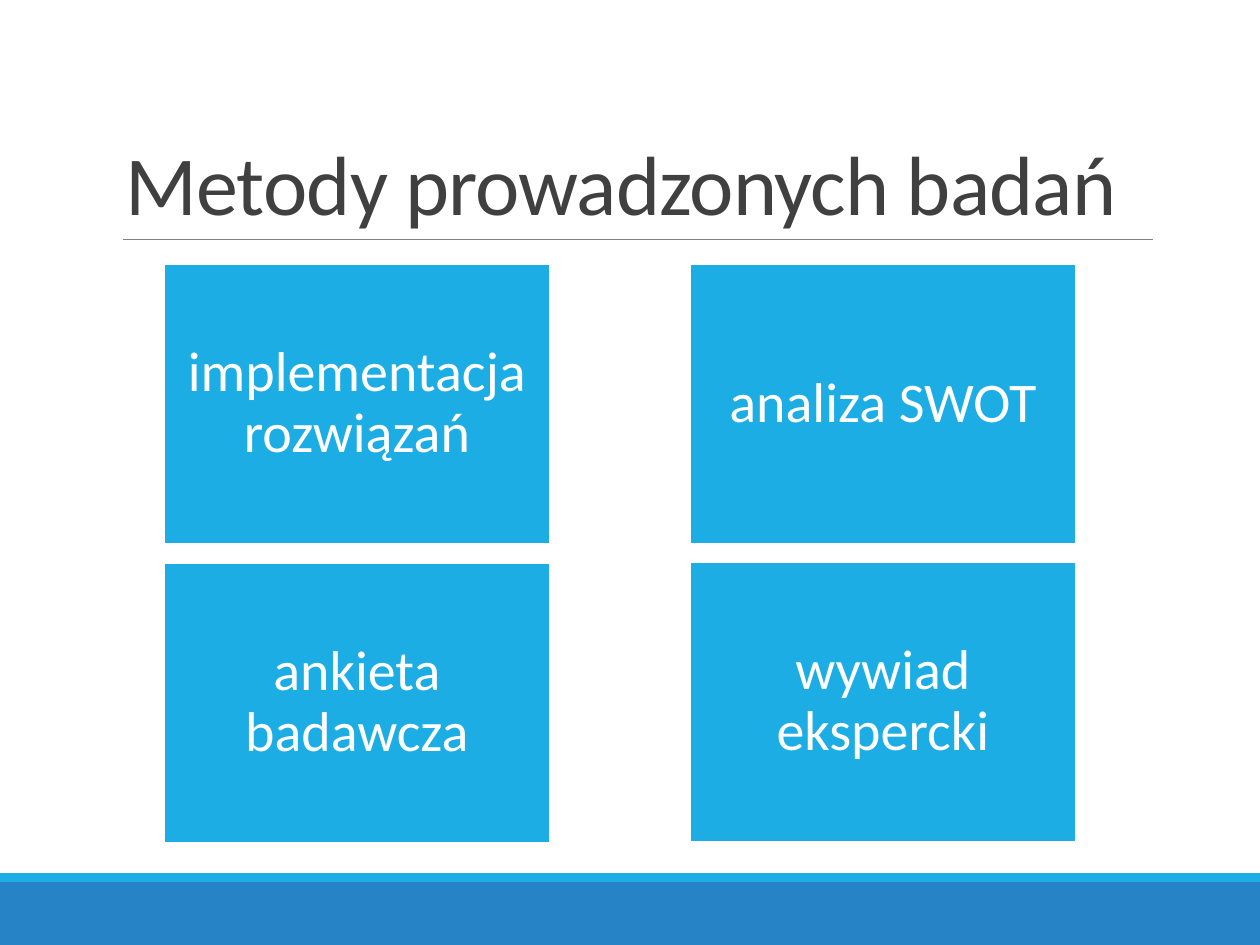
from lxml.etree import SubElement
from pptx import Presentation
from pptx.dml.color import RGBColor
from pptx.enum.shapes import MSO_CONNECTOR, MSO_SHAPE
from pptx.enum.text import MSO_ANCHOR, MSO_AUTO_SIZE, PP_ALIGN
from pptx.oxml.ns import qn
from pptx.util import Pt

COLORS = {"band": "2683C6", "accent": "1CADE4", "rule": "808080",
          "title": "404040", "white": "FFFFFF"}
PX = 914400 / 126


def px(*values):
    return [round(v * PX) for v in values]


def add_rect(box, color):
    sp = s.shapes.add_shape(MSO_SHAPE.RECTANGLE, *px(*box))
    sp.shadow.inherit = False
    sp.fill.solid()
    sp.fill.fore_color.rgb = RGBColor.from_string(COLORS[color])
    sp.line.fill.background()
    return sp


prs = Presentation()
prs.slide_width, prs.slide_height = px(1260, 945)
s = prs.slides.add_slide(prs.slide_layouts[5])

add_rect((0, 882, 1260, 63), "band")
add_rect((0, 873, 1260, 9), "accent")

rule = s.shapes.add_connector(MSO_CONNECTOR.STRAIGHT, *px(123, 239, 1153, 239))
rule.line.color.rgb = RGBColor.from_string(COLORS["rule"])
rule.line.width = Pt(0.5)
SubElement(rule._element.spPr, qn("a:effectLst"))

title = s.shapes.title
title.left, title.top, title.width, title.height = px(113, 39, 1040, 200)
tf = title.text_frame
tf.text = "Metody prowadzonych badań"
tf.word_wrap = True
tf.auto_size = MSO_AUTO_SIZE.NONE
tf.vertical_anchor = MSO_ANCHOR.BOTTOM
p = tf.paragraphs[0]
p.alignment = PP_ALIGN.LEFT
p.line_spacing = 0.85
r = p.runs[0]
r.font.name = "Calibri"
r.font.size = Pt(48)
r.font.color.rgb = RGBColor.from_string(COLORS["title"])
r.font._element.set("spc", "-50")

methods = [
    ("implementacja rozwiązań", 164, 264),
    ("analiza SWOT", 690, 264),
    ("ankieta badawcza", 164, 563),
    ("wywiad ekspercki", 690, 562),
]
for text, left, top in methods:
    sp = add_rect((left, top, 386, 280), "accent")
    sp.line.color.rgb = RGBColor.from_string(COLORS["white"])
    sp.line.width = Pt(1.25)
    tf = sp.text_frame
    tf.text = text
    tf.word_wrap = True
    tf.vertical_anchor = MSO_ANCHOR.MIDDLE
    tf.margin_left, tf.margin_top, tf.margin_right, tf.margin_bottom = px(*[16] * 4)
    p = tf.paragraphs[0]
    p.alignment = PP_ALIGN.CENTER
    p.line_spacing = 0.9
    r = p.runs[0]
    r.font.name = "Calibri"
    r.font.size = Pt(32)
    r.font.color.rgb = RGBColor.from_string(COLORS["white"])

prs.save("out.pptx")
